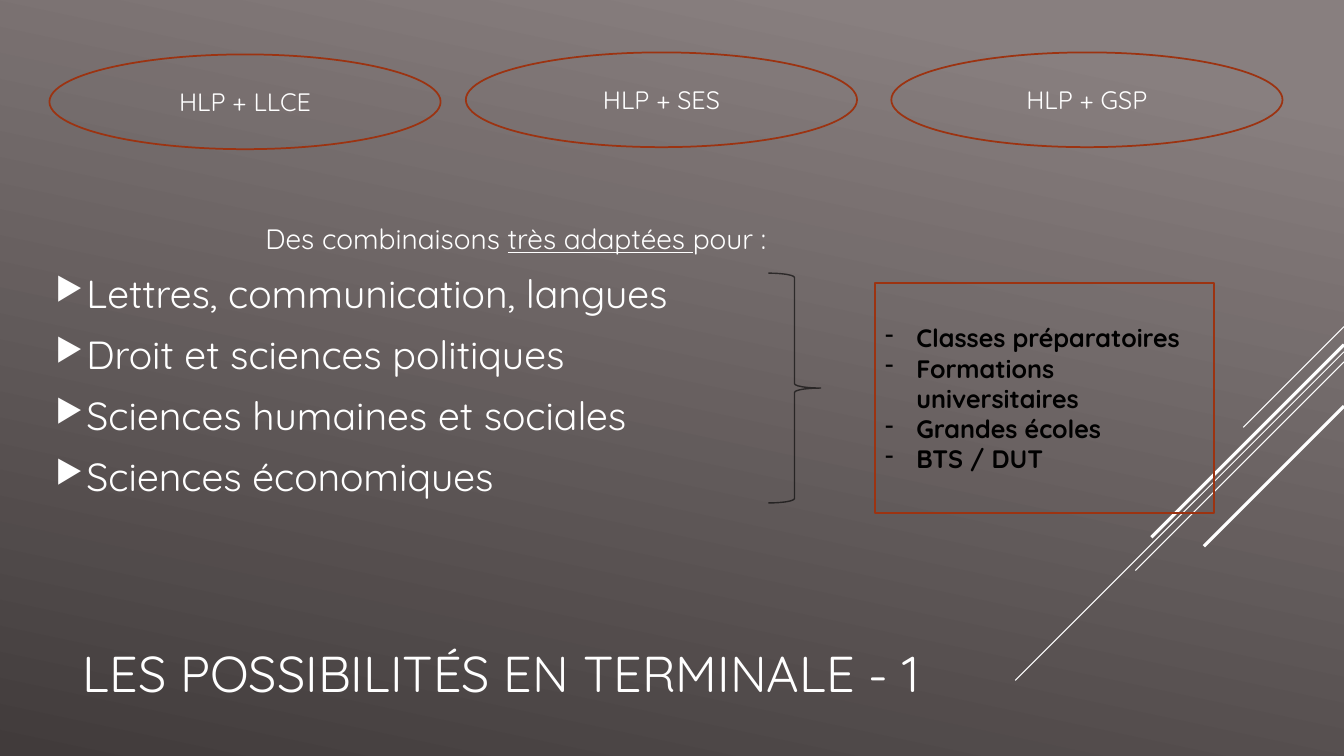
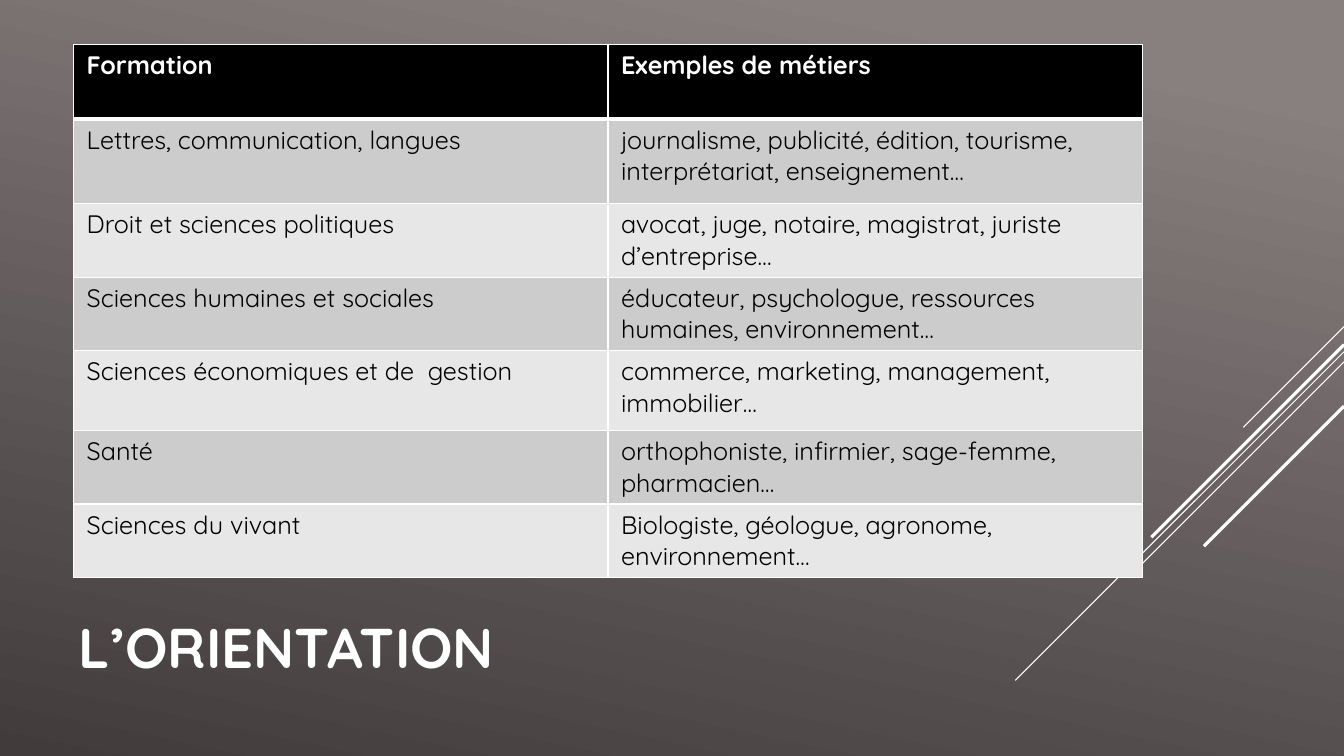
from lxml.etree import SubElement
from pptx import Presentation
from pptx.dml.color import RGBColor
from pptx.enum.shapes import MSO_CONNECTOR, MSO_SHAPE
from pptx.enum.text import MSO_ANCHOR as Anchor, PP_ALIGN as Align
from pptx.oxml.ns import qn
from pptx.util import Inches, Pt

WHITE = RGBColor(0xFF, 0xFF, 0xFF)
BLACK = RGBColor(0x00, 0x00, 0x00)
RUST = RGBColor(0x9C, 0x33, 0x11)
TAUPE = RGBColor(0x88, 0x7F, 0x7F)
DARK_TAUPE = RGBColor(0x41, 0x3B, 0x3B)
BAND_COLORS = (RGBColor(0xE7, 0xE7, 0xE7), RGBColor(0xCC, 0xCC, 0xCC))
FONT = "Quicksand"
PAGE_WIDTH = 13.33

# Diagonal rays from the right edge: start height, horizontal run, weight
RAYS = (
    (3.24, 1.0, 0.75),
    (3.49, 3.26, 0.75),
    (3.59, 2.07, 0.75),
    (3.42, 1.91, 2.25),
    (4.03, 1.39, 2.25),
)


def place(left, top, width, height):
    return [Inches(value) for value in (left, top, width, height)]


class SlideBuilder:
    """Holds the deck's style and the slide being filled."""

    def __init__(self):
        self.deck = Presentation()
        self.deck.slide_width = Inches(PAGE_WIDTH)
        self.deck.slide_height = Inches(7.5)
        self.page = None
        self.set_background()

    def set_background(self):
        fill = self.deck.slide_master.background.fill
        fill.gradient()
        fill.gradient_angle = 258
        stops = ((0.1, TAUPE), (1.0, DARK_TAUPE))
        for stop, (position, color) in zip(fill.gradient_stops, stops):
            stop.position = position
            stop.color.rgb = color

    def format_runs(self, para, size, color=WHITE, bold=False):
        for span in para.runs:
            span.font.name = FONT
            span.font.size = Pt(size)
            span.font.color.rgb = color
            span.font.bold = bold

    def add_bullet(self, para, symbol, color, percent=100):
        props = para._p.get_or_add_pPr()
        props.set("marL", str(Inches(0.31)))
        props.set("indent", str(-Inches(0.31)))
        tint = SubElement(props, qn("a:buClr"))
        SubElement(tint, qn("a:srgbClr"), val=str(color))
        SubElement(props, qn("a:buSzPct"), val=str(percent * 1000))
        SubElement(props, qn("a:buChar"), char=symbol)

    def new_page(self, title, left, top, size, bold=False):
        self.page = self.deck.slides.add_slide(self.deck.slide_layouts[5])
        for start, run, weight in RAYS:
            self.add_ray(start, run, weight)
        box = self.page.shapes.title
        box.left, box.top, box.width, box.height = place(left, top, 9.33, 1.65)
        frame = box.text_frame
        frame.text = title
        frame.word_wrap = True
        frame.vertical_anchor = Anchor.MIDDLE
        para = frame.paragraphs[0]
        para.alignment = Align.LEFT
        self.format_runs(para, size, bold=bold)

    def add_ray(self, start, run, weight):
        ray = self.page.shapes.add_connector(
            MSO_CONNECTOR.STRAIGHT,
            *place(PAGE_WIDTH, start, PAGE_WIDTH - run, start + run))
        ray.line.color.rgb = WHITE
        ray.line.width = Pt(weight)
        SubElement(ray._element.spPr, qn("a:effectLst"))

    def add_outline(self, kind, area, color=RUST, weight=1.25):
        shape = self.page.shapes.add_shape(kind, *place(*area))
        shape.shadow.inherit = False
        shape.fill.background()
        shape.line.color.rgb = color
        shape.line.width = Pt(weight)
        shape.text_frame.vertical_anchor = Anchor.MIDDLE
        return shape

    def add_ellipse(self, area, text):
        frame = self.add_outline(MSO_SHAPE.OVAL, area).text_frame
        frame.text = text
        frame.paragraphs[0].alignment = Align.CENTER
        self.format_runs(frame.paragraphs[0], 18)

    def add_brace(self, area):
        brace = self.add_outline(MSO_SHAPE.RIGHT_BRACE, area, BLACK, 1)
        color = brace.line._ln.find(".//" + qn("a:srgbClr"))
        SubElement(color, qn("a:alpha"), val="60000")

    def add_list_box(self, area, items):
        frame = self.add_outline(MSO_SHAPE.RECTANGLE, area).text_frame
        frame.text = "\n".join(items)
        for para in frame.paragraphs:
            para.alignment = Align.LEFT
            self.add_bullet(para, "-", BLACK)
            self.format_runs(para, 18, BLACK, True)

    def add_body(self, area, lead, items):
        frame = self.page.shapes.add_textbox(*place(*area)).text_frame
        frame.word_wrap = True
        frame.vertical_anchor = Anchor.MIDDLE
        intro = frame.paragraphs[0]
        intro.alignment = Align.CENTER
        for text, underlined in lead:
            span = intro.add_run()
            span.text = text
            span.font.underline = underlined
        self.format_runs(intro, 20)
        for item in items:
            para = frame.add_paragraph()
            para.text = item
            self.format_runs(para, 28)
        for para in frame.paragraphs:
            para.space_before = Pt(4)
            para.space_after = Pt(6)
        for para in frame.paragraphs[1:]:
            self.add_bullet(para, "▶", WHITE, 80)

    def add_table(self, area, heights, rows):
        table = self.page.shapes.add_table(
            len(rows), len(rows[0]), *place(*area)).table
        for row, height in zip(table.rows, heights):
            row.height = Inches(height)
        for index, texts in enumerate(rows):
            for column, text in enumerate(texts):
                self.fill_cell(table.cell(index, column), text, index)

    def fill_cell(self, cell, text, index):
        header = index == 0
        cell.text = text
        cell.margin_left = cell.margin_right = Inches(0.13)
        cell.margin_top = cell.margin_bottom = Inches(0.05)
        self.format_runs(cell.text_frame.paragraphs[0], 18,
                         WHITE if header else BLACK, header)
        # The rule under the header is thicker than the grid
        weights = {"L": 1, "R": 1, "T": 3 if index == 1 else 1,
                   "B": 3 if header else 1}
        props = cell._tc.get_or_add_tcPr()
        for side, weight in weights.items():
            edge = SubElement(props, qn("a:ln" + side), w=str(Pt(weight)))
            solid = SubElement(edge, qn("a:solidFill"))
            SubElement(solid, qn("a:srgbClr"), val=str(WHITE))
        cell.fill.solid()
        cell.fill.fore_color.rgb = BLACK if header else BAND_COLORS[index % 2]


def main():
    builder = SlideBuilder()

    # Subject combinations and the studies they lead to
    builder.new_page("LES POSSIBILITÉS EN TERMINALE - 1", 0.72, 5.85, 36)
    builder.add_body(
        (0.45, 2.08, 9.33, 3),
        (("Des combinaisons ", False), ("très adaptées ", True),
         ("pour :", False)),
        ("Lettres, communication, langues", "Droit et sciences politiques",
         "Sciences humaines et sociales", "Sciences économiques"))
    for left, top, text in ((0.49, 0.54, "HLP + LLCE"),
                            (4.62, 0.52, "HLP + SES"),
                            (8.84, 0.52, "HLP + GSP")):
        builder.add_ellipse((left, top, 3.88, 0.94), text)
    builder.add_brace((7.62, 2.71, 0.52, 2.28))
    builder.add_list_box(
        (8.68, 2.81, 3.36, 2.28),
        ("Classes préparatoires", "Formations universitaires",
         "Grandes écoles", "BTS / DUT"))

    # Careers for each field of study
    builder.new_page("L’ORIENTATION", 0.68, 5.58, 40, bold=True)
    builder.add_table(
        (0.73, 0.44, 10.6, 5.29),
        (0.74, 0.84, 0.73, 0.73, 0.79, 0.73, 0.73),
        (("Formation", "Exemples de métiers"),
         ("Lettres, communication, langues",
          "journalisme, publicité, édition, tourisme, interprétariat, "
          "enseignement…"),
         ("Droit et sciences politiques",
          "avocat, juge, notaire, magistrat, juriste d’entreprise…"),
         ("Sciences humaines et sociales",
          "éducateur, psychologue, ressources humaines, environnement…"),
         ("Sciences économiques et de  gestion",
          "commerce, marketing, management, immobilier…"),
         ("Santé", "orthophoniste, infirmier, sage-femme, pharmacien…"),
         ("Sciences du vivant",
          "Biologiste, géologue, agronome, environnement…")))

    builder.deck.save("out.pptx")


if __name__ == "__main__":
    main()
